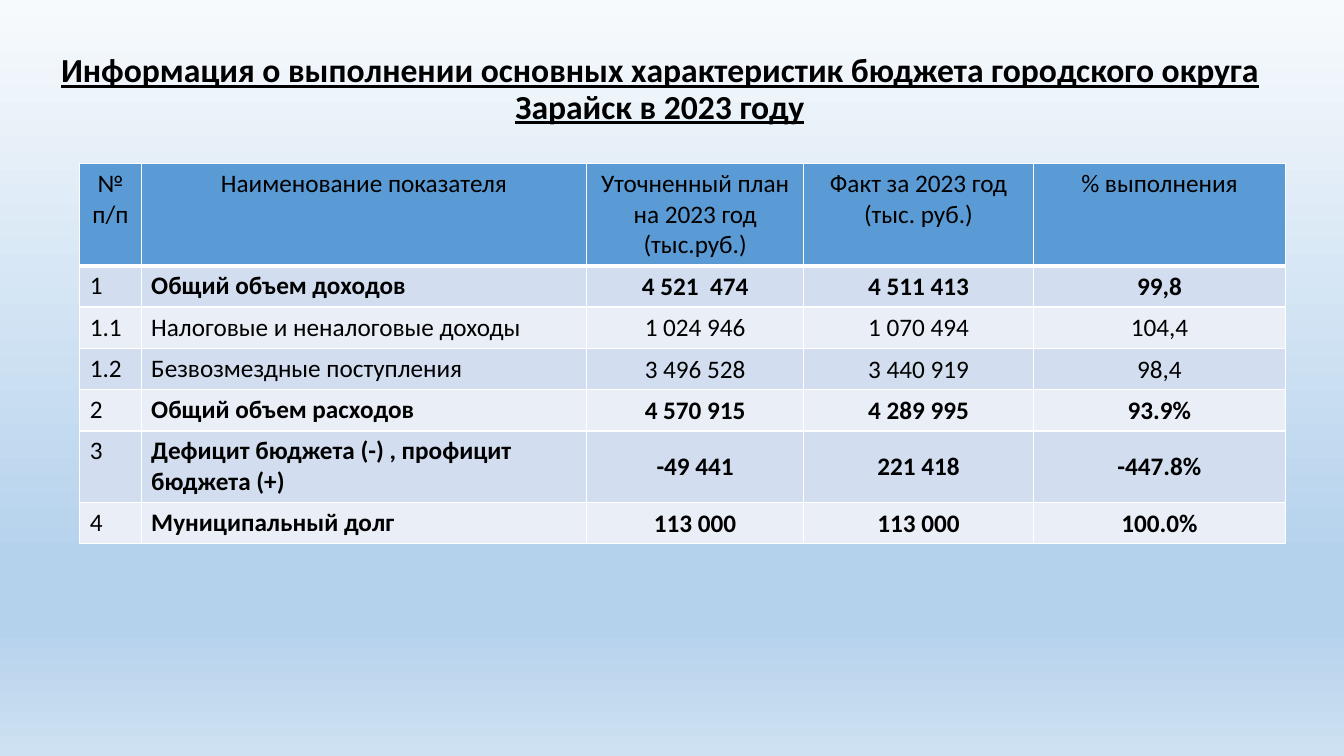
"""Build the slide on how the 2023 town budget was carried out."""
from dataclasses import dataclass

from lxml import etree
from pptx import Presentation
from pptx.dml.color import RGBColor
from pptx.enum import text
from pptx.oxml import ns
from pptx.util import Inches, Pt


@dataclass(frozen=True)
class Theme:
    """Colours, font and type sizes."""
    font: str = "Calibri"
    head: int = 24
    body: int = 18
    ink: str = "000000"
    line: str = "FFFFFF"
    top: str = "5B9BD5"
    bands: tuple = ("D2DEEF", "EAEFF7")
    sky: tuple = ((0, "F7FAFD"), (74, "B5D2EC"), (83, "B5D2EC"), (100, "CEE1F2"))


THEME = Theme()
TITLE = ("Информация о выполнении основных характеристик бюджета "
         "городского округа Зарайск в 2023 году")
WIDTHS = (0.61, 4.42, 2.15, 2.28, 2.5)
ROW = 0.41
ROWS = (
    ("№ п/п", "Наименование показателя", "Уточненный план на 2023 год (тыс.руб.)",
     "Факт за 2023 год (тыс. руб.)", "% выполнения"),
    ("1", "Общий объем доходов", "4 521  474", "4 511 413", "99,8"),
    ("1.1", "Налоговые и неналоговые доходы", "1 024 946", "1 070 494", "104,4"),
    ("1.2", "Безвозмездные поступления", "3 496 528", "3 440 919", "98,4"),
    ("2", "Общий объем расходов", "4 570 915", "4 289 995", "93.9%"),
    ("3", "Дефицит бюджета (-) , профицит бюджета (+)", "-49 441", "221 418", "-447.8%"),
    ("4", "Муниципальный долг", "113 000", "113 000", "100.0%"),
)


def style(para, size, bold, align):
    """Set the font and alignment of a paragraph."""
    font = para.font
    font.name, font.size, font.bold = THEME.font, Pt(size), bold
    font.color.rgb = RGBColor.from_string(THEME.ink)
    para.alignment = align


def paint(slide):
    """Fill the background with the vertical gradient."""
    fill = slide.background.fill
    fill.gradient()
    fill.gradient_angle = 270
    stops = slide.element.find(".//" + ns.qn("a:gsLst"))
    for stop in list(stops):
        stops.remove(stop)
    for pos, tone in THEME.sky:
        stop = etree.SubElement(stops, ns.qn("a:gs"), pos=str(pos * 1000))
        etree.SubElement(stop, ns.qn("a:srgbClr"), val=tone)


def add_title(slide):
    """Place and format the title."""
    title = slide.shapes.title
    title.left, title.top = Inches(0.17), Inches(0.17)
    title.width, title.height = Inches(12.75), Inches(1.45)
    frame = title.text_frame
    frame.text = TITLE
    frame.vertical_anchor = text.MSO_ANCHOR.MIDDLE
    para = frame.paragraphs[0]
    style(para, THEME.head, True, text.PP_ALIGN.CENTER)
    para.font.underline = True
    para.line_spacing = 0.9


def edge(cell, base):
    """Draw the four borders of a cell, the lower one base points wide."""
    props = cell._tc.get_or_add_tcPr()
    sides = (("L", 1), ("R", 1), ("T", 1), ("B", base))
    for spot, (side, width) in enumerate(sides):
        line = etree.Element(ns.qn("a:ln" + side), w=str(Pt(width)))
        fill = etree.SubElement(line, ns.qn("a:solidFill"))
        etree.SubElement(fill, ns.qn("a:srgbClr"), val=THEME.line)
        props.insert(spot, line)


def fill_cell(cell, words, row, col):
    """Write and format one cell by its place in the table."""
    head = row == 0
    figure = col > 1 and not head
    bold = not head and col > 0 and "." not in ROWS[row][0]
    mid = head or figure
    cell.text = words
    style(cell.text_frame.paragraphs[0], THEME.body, bold,
          text.PP_ALIGN.CENTER if mid else text.PP_ALIGN.LEFT)
    if figure:
        cell.vertical_anchor = text.MSO_ANCHOR.MIDDLE
        cell.margin_left = cell.margin_right = cell.margin_top = Inches(0.01)
        cell.margin_bottom = 0
    tone = THEME.top if head else THEME.bands[(row - 1) % 2]
    cell.fill.solid()
    cell.fill.fore_color.rgb = RGBColor.from_string(tone)
    edge(cell, 3 if head else 1)


def add_grid(slide):
    """Add the table of budget figures."""
    table = slide.shapes.add_table(
        len(ROWS), len(WIDTHS), Inches(0.79), Inches(1.62),
        Inches(sum(WIDTHS)), Inches(ROW * len(ROWS))).table
    for col, width in zip(table.columns, WIDTHS):
        col.width = Inches(width)
    for row, line in enumerate(ROWS):
        for col, words in enumerate(line):
            fill_cell(table.cell(row, col), words, row, col)


def main():
    """Build and save the slide."""
    deck = Presentation()
    deck.slide_width, deck.slide_height = Inches(13.33), Inches(7.5)
    slide = deck.slides.add_slide(deck.slide_layouts[5])
    paint(slide)
    add_title(slide)
    add_grid(slide)
    deck.save("out.pptx")


if __name__ == "__main__":
    main()
